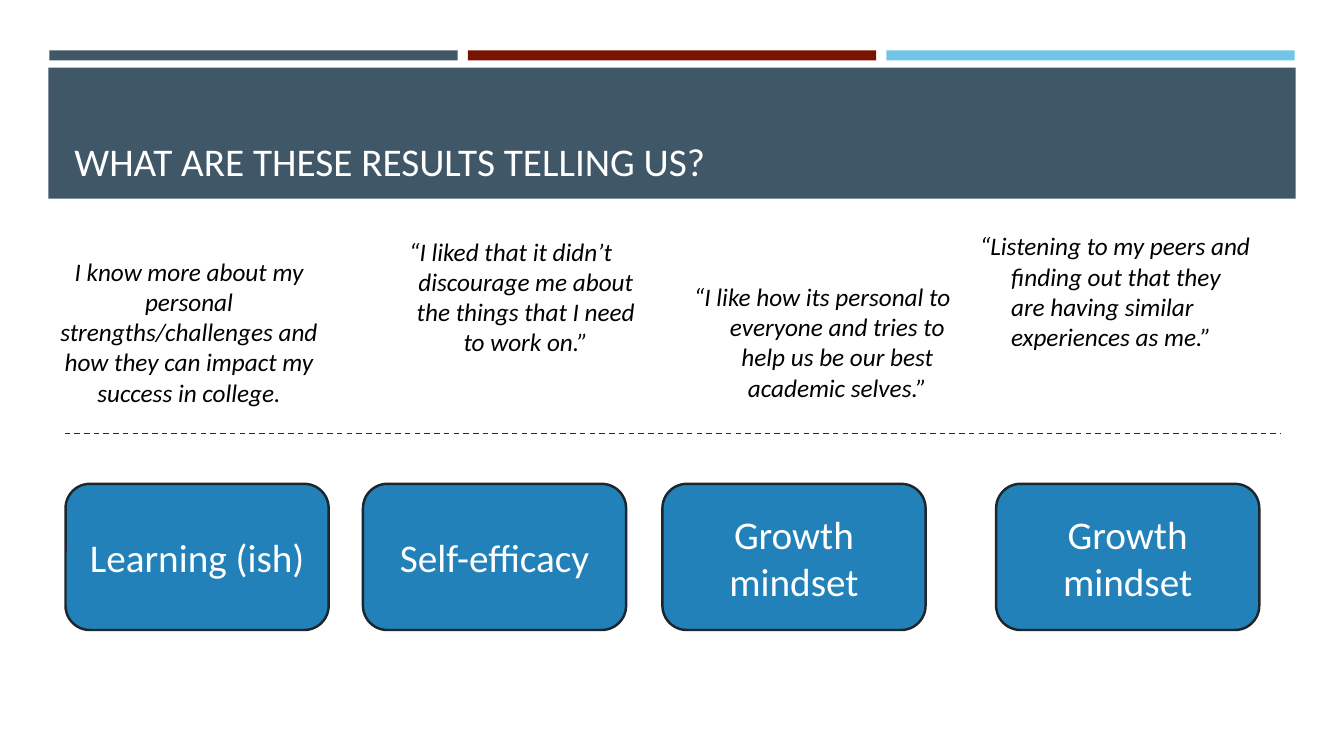
from pptx import Presentation
from pptx.dml.color import RGBColor
from pptx.enum import dml, shapes, text
from pptx.oxml import xmlchemy
from pptx.util import Inches, Pt

FONT = "Calibri"
COLORS = {
    "slate": "405767",
    "red": "791400",
    "sky": "71C5E7",
    "blue": "2281B8",
    "outline": "1C262D",
    "divider": "6D1200",
    "white": "FFFFFF",
    "black": "000000",
}
LEFT, CENTER = text.PP_ALIGN.LEFT, text.PP_ALIGN.CENTER
QUOTES = [
    (0.33, 2.49, CENTER, 0, 0,
     "I know more about my personal strengths/challenges and how they can "
     "impact my success in college."),
    (3.42, 2.29, CENTER, 0.5, -0.3,
     "“I liked that it didn’t discourage me about the things that I need to work on.”"),
    (6.51, 2.74, CENTER, 0.5, -0.3,
     "“I like how its personal to everyone and tries to help us be our best "
     "academic selves.”"),
    (9.41, 2.24, LEFT, 0.52, -0.31,
     "“Listening to my peers and finding out that they are having similar "
     "experiences as me.”"),
]
THEMES = [
    (0.65, "Learning (ish)"),
    (3.6, "Self-efficacy"),
    (6.57, "Growth mindset"),
    (9.88, "Growth mindset"),
]


def rgb(name):
    return RGBColor.from_string(COLORS[name])


def write(frame, words, size, color, align, italic=False):
    frame.word_wrap = True
    paragraph = frame.paragraphs[0]
    paragraph.alignment = align
    run = paragraph.add_run()
    run.text = words
    run.font.name = FONT
    run.font.size = Pt(size)
    run.font.italic = italic
    run.font.color.rgb = rgb(color)
    return paragraph


def add_block(slide, kind, left, top, width, height, color):
    block = slide.shapes.add_shape(
        kind, Inches(left), Inches(top), Inches(width), Inches(height))
    block.shadow.inherit = False
    block.fill.solid()
    block.fill.fore_color.rgb = rgb(color)
    block.line.fill.background()
    return block


def add_header(slide):
    rectangle = shapes.MSO_SHAPE.RECTANGLE
    for column, color in enumerate(("slate", "red", "sky")):
        add_block(slide, rectangle, 0.49 + 4.15 * column, 0.5, 4.05, 0.1, color)
    add_block(slide, rectangle, 0.48, 0.67, 12.37, 1.3, "slate")
    title = slide.shapes.add_textbox(
        Inches(0.64), Inches(0.77), Inches(12.06), Inches(1.11))
    title.text_frame.vertical_anchor = text.MSO_ANCHOR.BOTTOM
    write(title.text_frame, "WHAT ARE THESE RESULTS TELLING US?", 28, "white", LEFT)


def add_quote(slide, left, top, align, margin, indent, words):
    quote = slide.shapes.add_textbox(
        Inches(left), Inches(top), Inches(3.09), Inches(1.31))
    paragraph = write(quote.text_frame, words, 18, "black", align, italic=True)
    if margin:
        properties = paragraph._p.get_or_add_pPr()
        properties.set("marL", str(Inches(margin)))
        properties.set("indent", str(Inches(indent)))


def add_theme(slide, left, words):
    theme = add_block(
        slide, shapes.MSO_SHAPE.ROUNDED_RECTANGLE, left, 4.8, 2.61, 1.45, "blue")
    theme.line.color.rgb = rgb("outline")
    theme.line.width = Pt(1.75)
    theme.text_frame.vertical_anchor = text.MSO_ANCHOR.MIDDLE
    write(theme.text_frame, words, 28, "white", CENTER)


def add_divider(slide):
    divider = slide.shapes.add_connector(
        shapes.MSO_CONNECTOR.STRAIGHT,
        Inches(0.64), Inches(4.3), Inches(12.7), Inches(4.3))
    divider.line.color.rgb = rgb("divider")
    divider.line.width = Pt(1)
    divider.line.dash_style = dml.MSO_LINE.DASH
    divider._element.spPr.append(xmlchemy.OxmlElement("a:effectLst"))


def main():
    deck = Presentation()
    deck.slide_width, deck.slide_height = Inches(13.33), Inches(7.5)
    slide = deck.slides.add_slide(deck.slide_layouts[6])
    add_header(slide)
    for quote in QUOTES:
        add_quote(slide, *quote)
    for theme in THEMES:
        add_theme(slide, *theme)
    add_divider(slide)
    deck.save("out.pptx")


if __name__ == "__main__":
    main()
